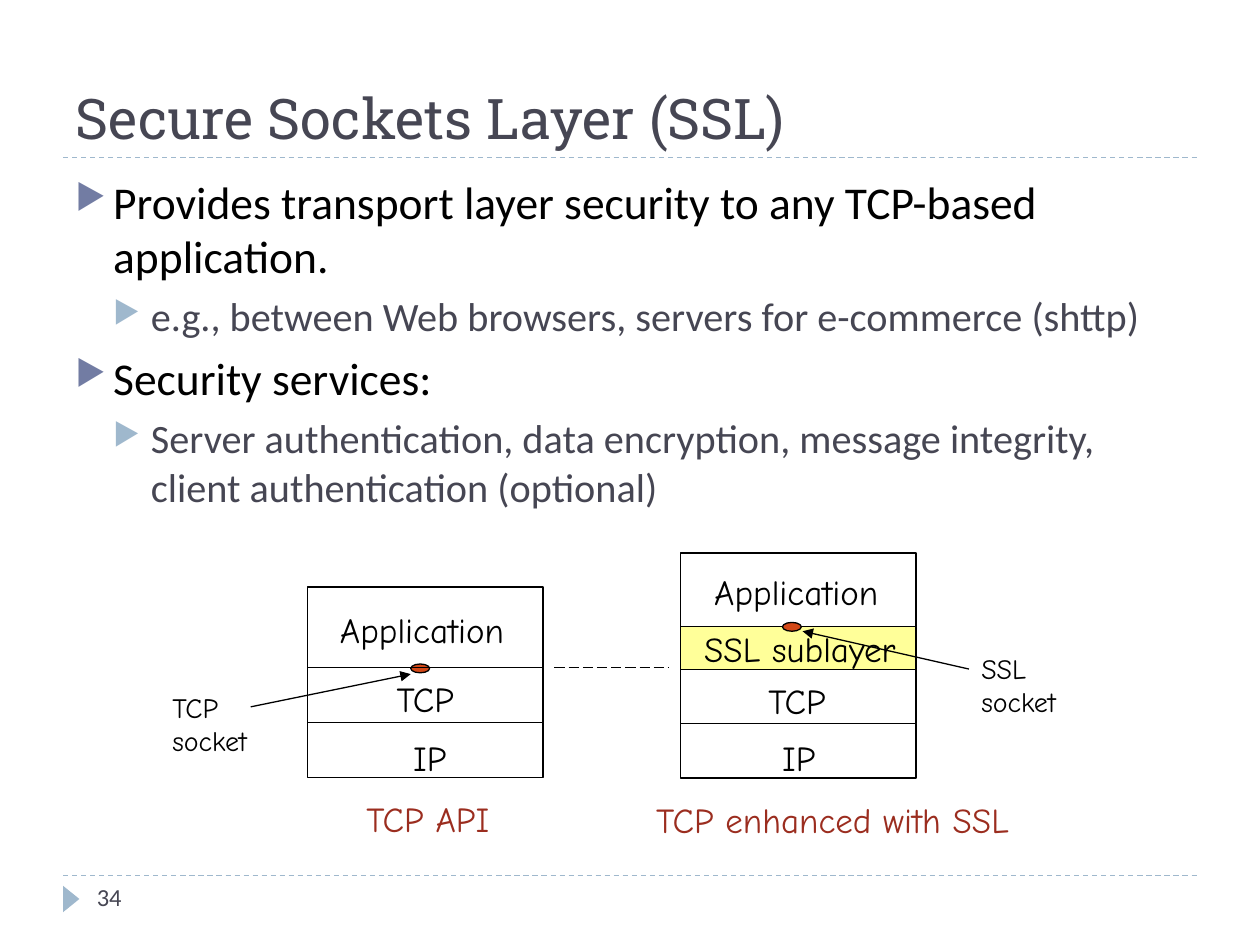
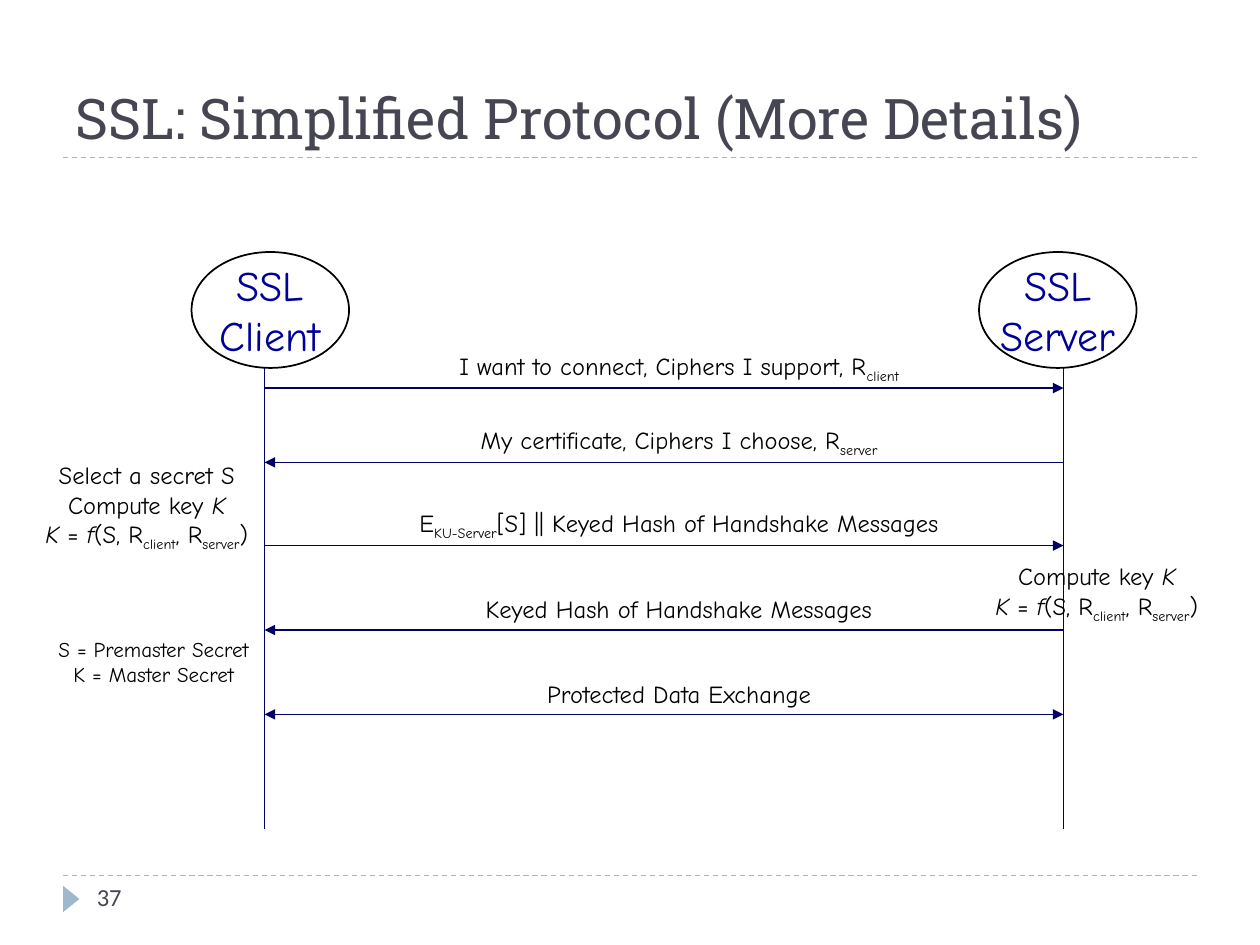
from dataclasses import dataclass
from typing import NamedTuple

from lxml.etree import SubElement as Sub
from pptx import Presentation
from pptx.dml.color import RGBColor
from pptx.enum.dml import MSO_LINE as Dash
from pptx.enum.shapes import MSO_CONNECTOR as Link, MSO_SHAPE as Form
from pptx.enum.text import MSO_ANCHOR as Anchor, MSO_AUTO_SIZE as Fit, PP_ALIGN as Align
from pptx.oxml.ns import qn
from pptx.util import Emu, Inches, Pt

WIDE, HIGH = Inches(10), Inches(7.5)
COLS, ROWS = 100, 75

HEAD, BODY, HAND = "Roboto Slab", "Calibri", "Comic Neue"
BLACK, WHITE, SLATE, MIST, PLUM = "000000", "FFFFFF", "464653", "9FB8CD", "727CA3"
RUST, EMBER, LEMON, NAVY, BLUE = "9B2D1F", "D34817", "FFFF99", "000066", "000099"


class Box(NamedTuple):
    """Left, top, width and height in grid columns and rows."""
    x: float
    y: float
    w: float
    h: float

    def place(self) -> tuple:
        return col(self.x), row(self.y), col(self.w), row(self.h)


class Style(NamedTuple):
    size: float
    font: str = HAND
    color: str = BLACK
    align: Align = Align.LEFT
    anchor: Anchor = Anchor.TOP


@dataclass
class Layer:
    """One band of a stack; dx and dy shift its label from the band's corner."""
    label: str
    high: float
    dx: float
    dy: float
    wide: float
    fill: str = ""


@dataclass
class Stack:
    left: float
    top: float
    layers: list


@dataclass
class Point:
    """A bullet of the body text."""
    text: str
    level: int = 0


class Message(NamedTuple):
    at: float
    text: str
    back: bool = False
    both: bool = False


class Note(NamedTuple):
    box: Box
    text: str
    size: float = 14


def col(n: float) -> Emu:
    return Emu(round(WIDE * n / COLS))


def row(n: float) -> Emu:
    return Emu(round(HIGH * n / ROWS))


def ink(code: str) -> RGBColor:
    return RGBColor.from_string(code)


def write(frame, text: str, style: Style) -> None:
    """Fill a frame; ~marks~ enclose subscripts and *stars* enclose italics."""
    frame.text = text
    frame.vertical_anchor = style.anchor
    for para in frame.paragraphs:
        raw = para.text
        para.clear()
        para.alignment = style.align
        for i, part in enumerate(raw.split("~")):
            for j, bit in enumerate(part.split("*")):
                if not bit:
                    continue
                run = para.add_run()
                run.text = bit
                font = run.font
                font.size, font.name = Pt(style.size), style.font
                font.color.rgb = ink(style.color)
                if j % 2:
                    font.italic = True
                if i % 2:
                    run._r.get_or_add_rPr().set("baseline", "-25000")


def label(slide, box: Box, text: str, style: Style, wrap: bool = False):
    frame = slide.shapes.add_textbox(*box.place()).text_frame
    frame.word_wrap = wrap
    frame.auto_size = Fit.NONE if wrap else Fit.SHAPE_TO_FIT_TEXT
    write(frame, text, style)
    return frame


def shape(slide, form: Form, box: Box, fill: str = "", edge: str = BLACK, width: float = 0.75):
    item = slide.shapes.add_shape(form, *box.place())
    item.shadow.inherit = False
    if fill:
        item.fill.solid()
        item.fill.fore_color.rgb = ink(fill)
    else:
        item.fill.background()
    if edge:
        item.line.color.rgb = ink(edge)
        item.line.width = Pt(width)
    else:
        item.line.fill.background()
    return item


def line(slide, start: tuple, end: tuple, color: str = BLACK, dash=None,
         head: bool = False, tail: bool = False) -> None:
    (x1, y1), (x2, y2) = start, end
    item = slide.shapes.add_connector(Link.STRAIGHT, col(x1), row(y1), col(x2), row(y2))
    item.line.color.rgb = ink(color)
    item.line.width = Pt(0.75)
    if dash:
        item.line.dash_style = dash
    prop = item._element.spPr
    for name, on in (("a:headEnd", head), ("a:tailEnd", tail)):
        if on:
            Sub(prop.find(qn("a:ln")), qn(name), type="triangle")
    Sub(prop, qn("a:effectLst"))


def start(deck, title: str, number: int):
    """Add a slide with the shared rules, marker, title and number."""
    slide = deck.slides.add_slide(deck.slide_layouts[5])
    for y in (69.5, 12.5):
        line(slide, (5, y), (95, y), MIST, Dash.DASH)
    mark = shape(slide, Form.ISOSCELES_TRIANGLE, Box(4.6, 70.7, 2.1, 1.3), MIST, "")
    mark.rotation = 90
    head = slide.shapes.title
    head.left, head.top, head.width, head.height = Box(5, 1.7, 90, 10.8).place()
    write(head.text_frame, title, Style(32, HEAD, SLATE, anchor=Anchor.BOTTOM))
    label(slide, Box(6.7, 69.5, 21.7, 4), str(number), Style(14, BODY, SLATE), True)
    return slide


def bullets(slide, box: Box, points: list) -> None:
    looks = ((26, BLACK, PLUM, 6), (23, SLATE, MIST, 5))
    text = "\n".join(p.text for p in points)
    frame = label(slide, box, text, Style(26, BODY), True)
    for para, point in zip(frame.paragraphs, points):
        size, color, dot, gap = looks[point.level]
        para.level = point.level
        para.space_before = Pt(gap)
        for run in para.runs:
            run.font.size = Pt(size)
            run.font.color.rgb = ink(color)
        prop = para._p.get_or_add_pPr()
        prop.set("marL", str(col(3 * (point.level + 1))))
        prop.set("indent", str(-col(3)))
        Sub(Sub(prop, qn("a:buClr")), qn("a:srgbClr"), val=dot)
        Sub(prop, qn("a:buSzPct"), val="76000")
        Sub(prop, qn("a:buChar"), char="▶")


def pile(slide, stack: Stack) -> None:
    """Draw the layers of a stack from the top down."""
    y = stack.top
    for band in stack.layers:
        shape(slide, Form.RECTANGLE, Box(stack.left, y, 18.7, band.high), band.fill)
        label(slide, Box(stack.left + band.dx, y + band.dy, band.wide, 4.3),
              band.label, Style(20))
        y += band.high


def socket(slide, x: float, y: float) -> None:
    shape(slide, Form.OVAL, Box(x, y, 1.5, 0.7), EMBER)


def layers(deck) -> None:
    slide = start(deck, "Secure Sockets Layer (SSL)", 34)
    bullets(slide, Box(5, 13.3, 90, 54), [
        Point("Provides transport layer security to any TCP-based application."),
        Point("e.g., between Web browsers, servers for e-commerce (shttp)", 1),
        Point("Security services:"),
        Point("Server authentication, data encryption, message integrity, "
              "client authentication (optional)", 1),
    ])
    plain = Stack(24.4, 46.6, [
        Layer("Application", 6.4, 1.6, 1.2, 16.4),
        Layer("TCP", 4.35, 6.1, 0.3, 7),
        Layer("IP", 4.35, 7.4, 0.6, 5),
    ])
    secure = Stack(54, 43.9, [
        Layer("Application", 5.85, 1.7, 0.9, 16.4),
        Layer("SSL sublayer", 3.4, 0.9, -0.4, 19.2, LEMON),
        Layer("TCP", 4.3, 6, 0.3, 7),
        Layer("IP", 4.3, 7.1, 0.5, 5),
    ])
    socket(slide, 32.6, 52.7)
    pile(slide, plain)
    pile(slide, secure)
    socket(slide, 62.1, 49.4)

    line(slide, (19.9, 56.1), (32.6, 53.5), tail=True)
    line(slide, (76.9, 53.1), (63.7, 50.1), tail=True)
    line(slide, (44, 53), (53.1, 53), dash=Dash.LONG_DASH)
    label(slide, Box(12.7, 54.3, 11.4, 6.4), "TCP\nsocket", Style(16), True)
    label(slide, Box(76.9, 51.2, 8.9, 6.4), "SSL\nsocket", Style(16))
    label(slide, Box(28.1, 62.8, 16, 4.3), "TCP API", Style(20, color=RUST), True)
    label(slide, Box(51.1, 62.9, 32.5, 4.3), "TCP enhanced with SSL", Style(20, color=RUST))


def protocol(deck) -> None:
    slide = start(deck, "SSL: Simplified Protocol (More Details)", 37)
    near, far = 21, 84.4
    for name, x, life in (("Client", 15.2, near), ("Server", 77.7, far)):
        peer = shape(slide, Form.OVAL, Box(x, 20, 12.5, 9.2), WHITE, width=1)
        peer.text_frame.word_wrap = False
        write(peer.text_frame, f"SSL\n{name}",
              Style(24, color=BLUE, align=Align.CENTER, anchor=Anchor.MIDDLE))
        line(slide, (life, 29.2), (life, 65.8), NAVY)

    mid = Style(14, align=Align.CENTER, anchor=Anchor.MIDDLE)
    for msg in (
        Message(30.8, "I want to connect, Ciphers I support, R~client~"),
        Message(36.7, "My certificate, Ciphers I choose, R~server~", back=True),
        Message(43.3, "E~KU-Server~[S] || Keyed Hash of Handshake Messages"),
        Message(50, "Keyed Hash of Handshake Messages", back=True),
        Message(56.7, "Protected Data Exchange", both=True),
    ):
        ends = (far, near) if msg.back else (near, far)
        line(slide, (ends[0], msg.at), (ends[1], msg.at), NAVY, head=msg.both, tail=True)
        label(slide, Box(29.9, msg.at - 3.3, 48, 3.3), msg.text, mid)

    key = "Compute key *K*\n*K* = *f*(S, R~client~, R~server~)"
    for note in (
        Note(Box(1.2, 36.2, 20.9, 8), f"Select a secret S\n{key}"),
        Note(Box(76.6, 44.2, 20.9, 5.7), key),
        Note(Box(2.7, 50, 19, 5), "S = Premaster Secret\nK = Master Secret", 12),
    ):
        label(slide, note.box, note.text, mid._replace(size=note.size))


def main() -> None:
    deck = Presentation()
    deck.slide_width, deck.slide_height = WIDE, HIGH
    layers(deck)
    protocol(deck)
    deck.save("out.pptx")


if __name__ == "__main__":
    main()
